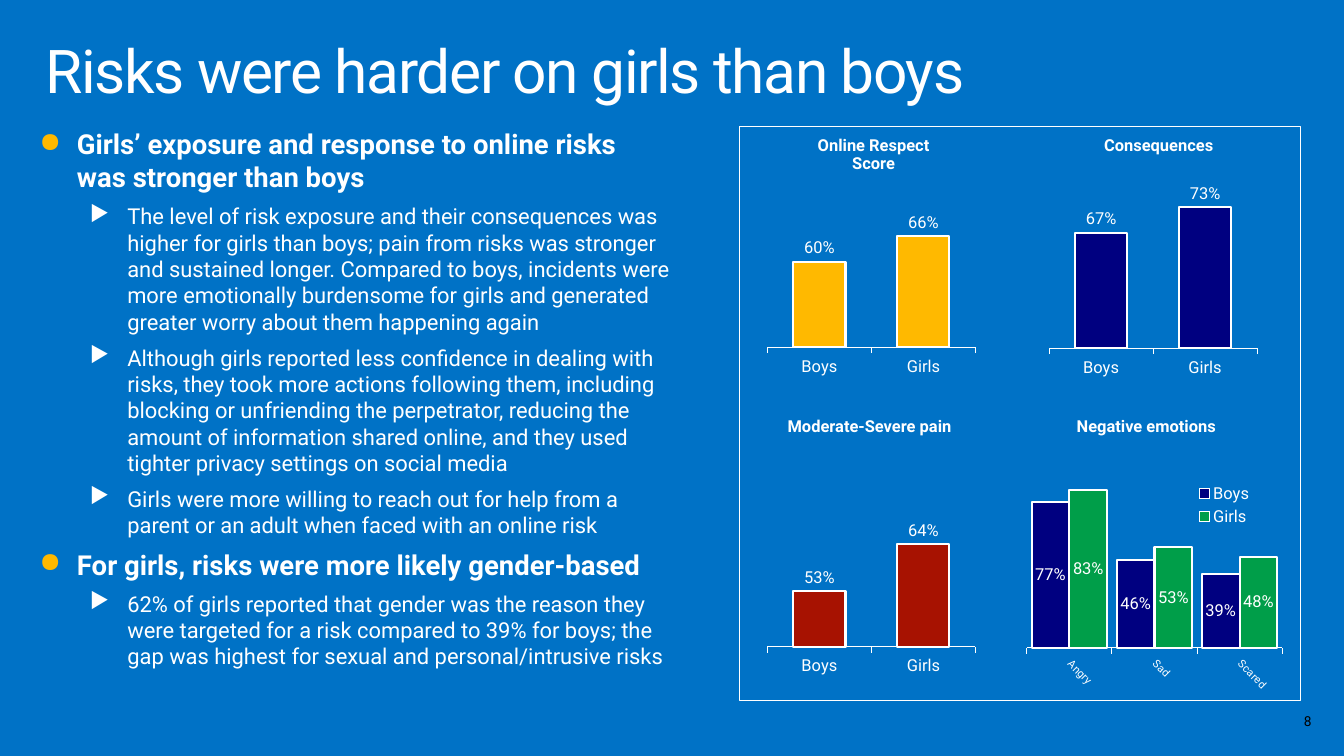
from pptx import Presentation
from pptx.chart.data import CategoryChartData
from pptx.dml.color import RGBColor
from pptx.enum.chart import XL_CHART_TYPE, XL_LABEL_POSITION, XL_LEGEND_POSITION, XL_TICK_MARK
from pptx.enum.shapes import MSO_SHAPE
from pptx.enum.text import MSO_ANCHOR, PP_ALIGN
from pptx.oxml import parse_xml
from pptx.oxml.ns import nsdecls, qn
from pptx.util import Inches, Pt

COLUMNS = XL_CHART_TYPE.COLUMN_CLUSTERED
OUTSIDE, CENTERED = XL_LABEL_POSITION.OUTSIDE_END, XL_LABEL_POSITION.CENTER
LEGEND_RIGHT = XL_LEGEND_POSITION.RIGHT
TICK_OUT, TICK_NONE = XL_TICK_MARK.OUTSIDE, XL_TICK_MARK.NONE
RECTANGLE = MSO_SHAPE.RECTANGLE
TOP, MIDDLE = MSO_ANCHOR.TOP, MSO_ANCHOR.MIDDLE
LEFT, CENTER, RIGHT = PP_ALIGN.LEFT, PP_ALIGN.CENTER, PP_ALIGN.RIGHT

FONT = "Roboto"
COLORS = {
    "blue": "0072C6",
    "white": "FFFFFF",
    "black": "000000",
    "gold": "FFB900",
    "navy": "000080",
    "red": "A71201",
    "green": "009E49",
}
PLOT_AREA = (0.03, 0.135, 0.957, 0.605)
LEGEND_AREA = (0.66, 0.15, 0.22, 0.17)

FINDINGS = [
    (0, "Girls’ exposure and response to online risks was stronger than boys"),
    (1, "The level of risk exposure and their consequences was higher for girls than boys; "
        "pain from risks was stronger and sustained longer. Compared to boys, incidents were "
        "more emotionally burdensome for girls and generated greater worry about them "
        "happening again"),
    (1, "Although girls reported less confidence in dealing with risks, they took more actions "
        "following them, including blocking or unfriending the perpetrator, reducing the amount "
        "of information shared online, and they used tighter privacy settings on social media"),
    (1, "Girls were more willing to reach out for help from a parent or an adult when faced "
        "with an online risk"),
    (0, "For girls, risks were more likely gender-based"),
    (1, "62% of girls reported that gender was the reason they were targeted for a risk compared "
        "to 39% for boys; the gap was highest for sexual and personal/intrusive risks"),
]
GENDER_CHARTS = [
    (10.55, 1.41, "navy", (0.67, 0.73)),
    (7.7, 1.4, "gold", (0.6, 0.66)),
    (7.7, 4.43, "red", (0.53, 0.64)),
]
CHART_TITLES = [
    ("Online Respect Score", 7.84, 1.3, 2),
    ("Consequences", 10.55, 1.3, 2.35),
    ("Negative emotions", 10.65, 4.14, 1.9),
    ("Moderate-Severe pain", 7.72, 4.14, 2.16),
]
EMOTIONS = ("Angry", "Sad", "Scared")
EMOTION_SERIES = [
    ("Boys", "navy", (0.77, 0.46, 0.39)),
    ("Girls", "green", (0.83, 0.53, 0.48)),
]


def rgb(color):
    return RGBColor.from_string(COLORS[color])


def layout_xml(area, target=""):
    parts = [f'<c:{mode}Mode val="edge"/>' for mode in "xy"]
    parts += [f'<c:{key} val="{value}"/>' for key, value in zip("xywh", area)]
    return parse_xml(f'<c:layout {nsdecls("c")}><c:manualLayout>{target}'
                     f'{"".join(parts)}</c:manualLayout></c:layout>')


def place(element, index, layout):
    for old in element.findall(qn("c:layout")):
        element.remove(old)
    element.insert(index, layout)


class SlideBuilder:
    def __init__(self, page):
        self.page = page
        page.background.fill.solid()
        page.background.fill.fore_color.rgb = rgb("blue")

    def style(self, font, size, color="white", bold=False):
        font.name, font.size, font.bold = FONT, Pt(size), bold
        font.color.rgb = rgb(color)

    def span(self, para, text, size, color="white", bold=False):
        span = para.add_run()
        span.text = text
        self.style(span.font, size, color, bold)
        return span

    def text(self, text, at, size, color="white", bold=False, align=LEFT, anchor=TOP,
             insets=(0.1, 0.05), line_spacing=None, wrap=True):
        frame = self.page.shapes.add_textbox(*map(Inches, at)).text_frame
        frame.word_wrap, frame.vertical_anchor = wrap, anchor
        frame.margin_left = frame.margin_right = Inches(insets[0])
        frame.margin_top = frame.margin_bottom = Inches(insets[1])
        para = frame.paragraphs[0]
        para.alignment, para.line_spacing = align, line_spacing
        return self.span(para, text, size, color, bold)

    def rectangle(self, at, fill=None, line=None):
        box = self.page.shapes.add_shape(RECTANGLE, *map(Inches, at))
        box.shadow.inherit = False
        if fill:
            box.fill.solid()
            box.fill.fore_color.rgb = rgb(fill)
        else:
            box.fill.background()
        if line:
            box.line.color.rgb, box.line.width = rgb(line), Pt(0.75)
        else:
            box.line.fill.background()
        return box

    def bullets(self, items, at):
        frame = self.rectangle(at, fill="blue").text_frame
        frame.word_wrap, frame.vertical_anchor = True, TOP
        for number, (level, text) in enumerate(items):
            para = frame.add_paragraph() if number else frame.paragraphs[0]
            para.level, para.alignment = level, LEFT
            para.space_before, para.space_after = Pt(6), Pt(1)
            properties = para._p.get_or_add_pPr()
            properties.set("marL", str(Inches((0.38, 0.89)[level])))
            properties.set("indent", str(Inches(-0.38)))
            color = COLORS[("gold", "white")[level]]
            properties.append(parse_xml(
                f'<a:buClr {nsdecls("a")}><a:srgbClr val="{color}"/></a:buClr>'))
            properties.append(parse_xml(f'<a:buChar {nsdecls("a")} char="{"●▶"[level]}"/>'))
            self.span(para, text, (20, 16)[level], bold=level == 0)

    def columns(self, at, categories, series, low, high, gap, label_position,
                axis_size=12, rotation=None, legend=False):
        data = CategoryChartData(number_format="0%")
        data.categories = categories
        for name, _, values in series:
            data.add_series(name, values)
        chart = self.page.shapes.add_chart(COLUMNS, *map(Inches, at), data).chart
        chart.has_title = False
        self.style(chart.font, 10)

        values_axis = chart.value_axis
        values_axis.minimum_scale, values_axis.maximum_scale = low, high
        values_axis.has_major_gridlines = False
        values_axis.visible = False
        axis = chart.category_axis
        axis.major_tick_mark, axis.minor_tick_mark = TICK_OUT, TICK_NONE
        axis.format.line.color.rgb, axis.format.line.width = rgb("white"), Pt(0.75)
        self.style(axis.tick_labels.font, axis_size)
        if rotation:
            axis._element.find(qn("c:txPr")).find(qn("a:bodyPr")).set("rot", str(rotation * 60000))

        plot = chart.plots[0]
        plot.vary_by_categories, plot.gap_width, plot.overlap = False, gap, 0
        for bars, (_, color, _) in zip(plot.series, series):
            bars.format.fill.solid()
            bars.format.fill.fore_color.rgb = rgb(color)
            bars.format.line.color.rgb, bars.format.line.width = rgb("white"), Pt(1.5)
            labels = bars.data_labels
            labels.show_value, labels.position = True, label_position
            labels.number_format, labels.number_format_is_linked = "0%", False
            self.style(labels.font, 12)

        place(plot._element.getparent(), 0,
              layout_xml(PLOT_AREA, '<c:layoutTarget val="inner"/>'))
        chart.has_legend = legend
        if legend:
            chart.legend.position = LEGEND_RIGHT
            chart.legend.include_in_layout = False
            self.style(chart.legend.font, 12)
            place(chart.legend._element, 1, layout_xml(LEGEND_AREA))


def main():
    deck = Presentation()
    deck.slide_width, deck.slide_height = Inches(13.6), Inches(7.65)
    builder = SlideBuilder(deck.slides.add_slide(deck.slide_layouts[6]))

    builder.text("8", (10.2, 7.09, 3.17, 0.41), 10, "black", align=RIGHT, anchor=MIDDLE)
    title = builder.text("Risks were harder on girls than boys", (0.3, 0.32, 13, 1), 44,
                         insets=(0.16, 0.1), line_spacing=0.9)
    title.font._element.set("spc", "-100")
    builder.bullets(FINDINGS, (0.3, 1.24, 6.58, 5.64))

    for left, top, color, values in GENDER_CHARTS:
        builder.columns((left, top, 2.2, 2.86), ("Boys", "Girls"),
                        [("Series 1", color, values)], 0.4, 0.8, 100, OUTSIDE)
    builder.columns((10.31, 4.44, 2.7, 2.86), EMOTIONS, EMOTION_SERIES, 0, 0.9, 25, CENTERED,
                    axis_size=8, rotation=45, legend=True)
    for text, left, top, width in CHART_TITLES:
        builder.text(text, (left, top, width, 0.5), 12, bold=True, align=CENTER,
                     insets=(0.2, 0.16), line_spacing=0.9, wrap=text == "Consequences")
    builder.rectangle((7.48, 1.28, 5.68, 5.81), line="white")

    deck.save("out.pptx")


if __name__ == "__main__":
    main()
